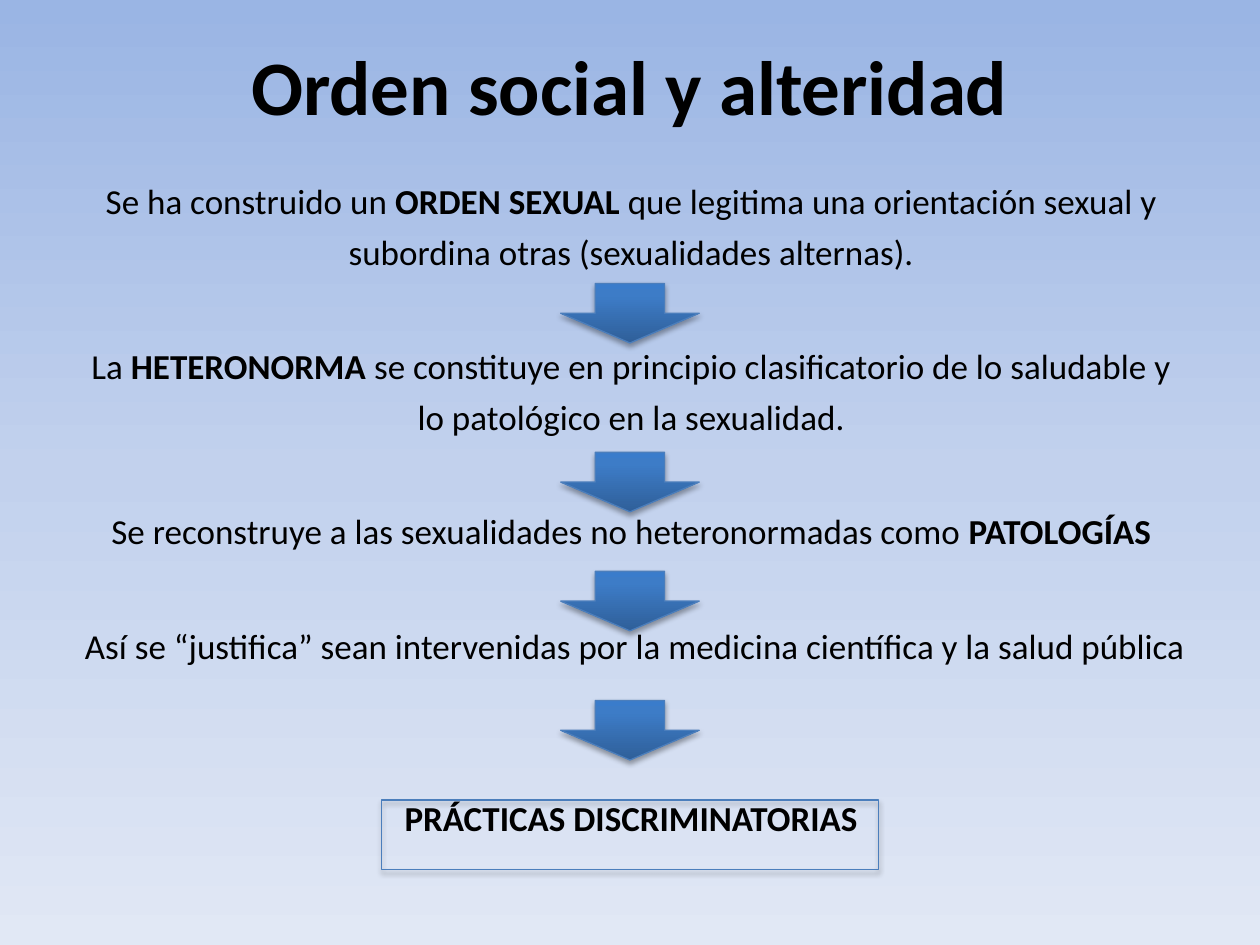
"""Build the slide on social order and otherness as a chain of statements."""
import pptx
import pptx.dml.color
import pptx.enum.shapes
import pptx.enum.text
import pptx.oxml
import pptx.oxml.ns
import pptx.util

Pt = pptx.util.Pt
qn = pptx.oxml.ns.qn
MIDDLE = pptx.enum.text.MSO_ANCHOR.MIDDLE
TOP = pptx.enum.text.MSO_ANCHOR.TOP
SHAPES = pptx.enum.shapes.MSO_SHAPE

COLORS = {"text": "000000", "outline": "4B7EBC", "shadow": "000000"}
SKY = [(0, "9AB5E4"), (50, "C2D1ED"), (100, "E1E8F5")]
ARROW_BLUE = [(0, "2F5F99"), (80, "3D7CC7"), (100, "3A7CCB")]

TITLE = [(0, [("Orden social y alteridad", True)])]
STATEMENTS = [
    (4, [("Se ha construido un ", False), ("ORDEN SEXUAL", True),
         (" que legitima una orientación sexual y subordina otras "
          "(sexualidades alternas).", False)]),
    (36.7, [("La ", False), ("HETERONORMA", True),
            (" se constituye en principio clasificatorio de lo saludable y "
             "lo patológico en la sexualidad.", False)]),
    (36.7, [("Se reconstruye a las sexualidades no heteronormadas como ", False),
            ("PATOLOGÍAS", True)]),
    (36.7, [(" Así se “justifica” sean intervenidas por la medicina científica "
             "y la salud pública", False)]),
    (69.4, [("PRÁCTICAS DISCRIMINATORIAS", True)]),
]
SLIDE_WIDTH, SLIDE_HEIGHT = 720, 540
ARROW_WIDTH, ARROW_HEIGHT = 79.2, 34
ARROW_TOPS = [162, 258.5, 326.5, 400.3]
FRAME_WIDTH, FRAME_HEIGHT, FRAME_TOP = 284, 39.6, 457.2


def rgb(value):
    return pptx.dml.color.RGBColor.from_string(value)


def paint_gradient(fill, element, stops, angle):
    fill.gradient()
    fill.gradient_angle = angle
    stop_list = element.find(".//" + qn("a:gsLst"))
    stop_list.clear()
    for position, color in stops:
        stop = stop_list.makeelement(qn("a:gs"), {"pos": str(position * 1000)})
        stop.append(stop.makeelement(qn("a:srgbClr"), {"val": color}))
        stop_list.append(stop)


def add_shadow(shape):
    shape.shadow.inherit = False
    effects = shape.element.spPr.find(qn("a:effectLst"))
    effects.append(pptx.oxml.parse_xml(
        f'<a:outerShdw {pptx.oxml.ns.nsdecls("a")} blurRad="{Pt(3.1)}" '
        f'dist="{Pt(1.8)}" dir="5400000" rotWithShape="0">'
        f'<a:srgbClr val="{COLORS["shadow"]}"><a:alpha val="35000"/>'
        '</a:srgbClr></a:outerShdw>'))


def add_text(slide, bounds, paragraphs, size, line_spacing, anchor):
    box = slide.shapes.add_textbox(*map(Pt, bounds))
    frame = box.text_frame
    frame.word_wrap = True
    frame.vertical_anchor = anchor
    for index, (space, spans) in enumerate(paragraphs):
        para = frame.add_paragraph() if index else frame.paragraphs[0]
        layout = {"alignment": pptx.enum.text.PP_ALIGN.CENTER,
                  "line_spacing": line_spacing, "space_before": Pt(space)}
        for name, value in layout.items():
            setattr(para, name, value)
        for text, bold in spans:
            span = para.add_run()
            span.text = text
            for name, value in {"name": "Calibri", "size": Pt(size), "bold": bold}.items():
                setattr(span.font, name, value)
            span.font.color.rgb = rgb(COLORS["text"])


def add_centred_shape(slide, kind, top, width, height):
    left = (SLIDE_WIDTH - width) / 2
    shape = slide.shapes.add_shape(kind, Pt(left), Pt(top), Pt(width), Pt(height))
    shape.line.color.rgb = rgb(COLORS["outline"])
    shape.line.width = Pt(0.75)
    add_shadow(shape)
    return shape


def main():
    deck = pptx.Presentation()
    deck.slide_width, deck.slide_height = Pt(SLIDE_WIDTH), Pt(SLIDE_HEIGHT)
    slide = deck.slides.add_slide(deck.slide_layouts[6])
    paint_gradient(slide.background.fill, slide.element, SKY, 270)

    add_text(slide, (36, 3.6, 648, 90), TITLE, 44, 1.0, MIDDLE)
    add_text(slide, (36.7, 94.3, 648, 425.5), STATEMENTS, 20, 1.2, TOP)

    frame = add_centred_shape(slide, SHAPES.RECTANGLE, FRAME_TOP, FRAME_WIDTH, FRAME_HEIGHT)
    frame.fill.background()
    for top in ARROW_TOPS:
        arrow = add_centred_shape(slide, SHAPES.DOWN_ARROW, top, ARROW_WIDTH, ARROW_HEIGHT)
        paint_gradient(arrow.fill, arrow.element.spPr, ARROW_BLUE, 90)

    deck.save("out.pptx")


if __name__ == "__main__":
    main()
